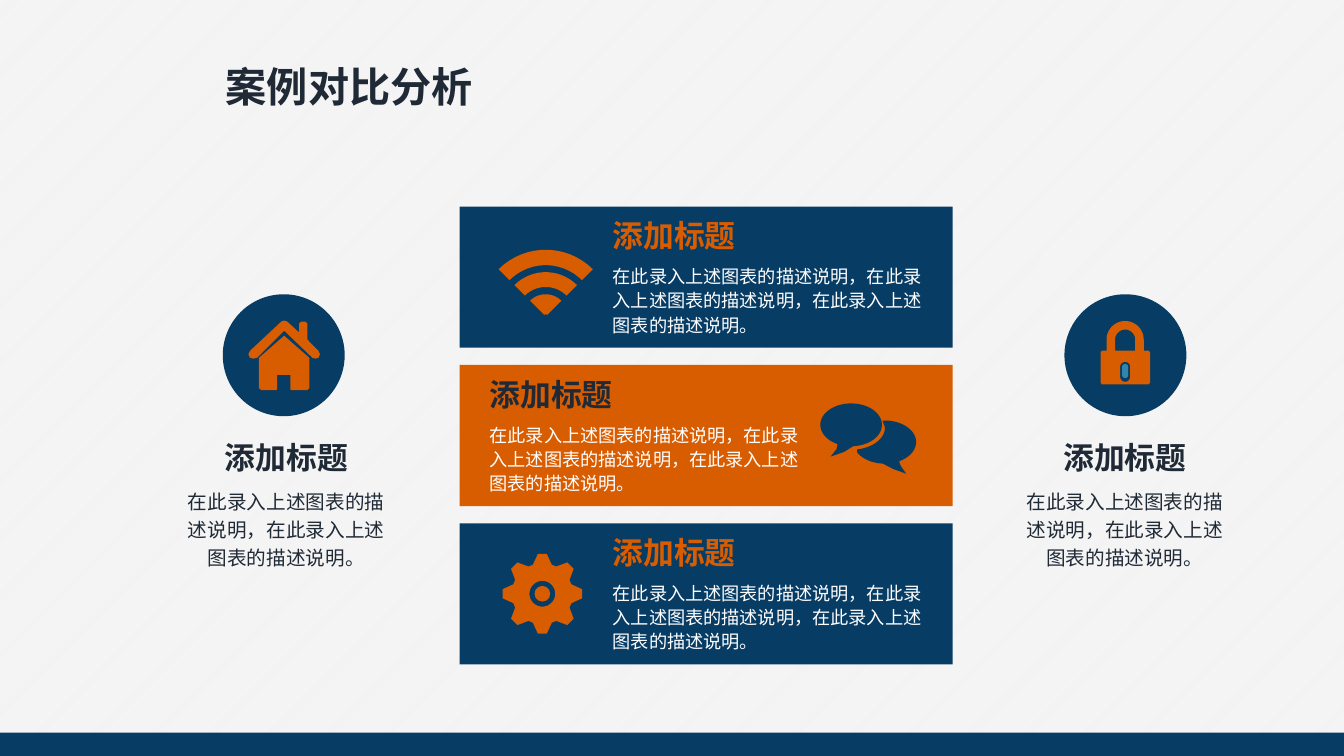
import math

import pptx
import pptx.dml.color
import pptx.enum.dml
import pptx.enum.shapes
import pptx.enum.text
import pptx.oxml
import pptx.oxml.ns
import pptx.util

Pt = pptx.util.Pt
RGB = pptx.dml.color.RGBColor.from_string
SHAPE = pptx.enum.shapes.MSO_SHAPE
ALIGN = pptx.enum.text.PP_ALIGN


class Theme:
    navy, orange, ink = "073C65", "D85C00", "202A36"
    white, grey, sky = "FFFFFF", "F2F2F2", "5ECCF3"
    font, title_font = "Noto Sans CJK SC", "Arial"
    title, heading, side_body, card_body = 29.4, 22, 14, 13


def put_text(sp, text, size, color, bold=False, align=ALIGN.LEFT, spacing=None,
             font=Theme.font, wrap=True):
    tf = sp.text_frame
    tf.word_wrap = wrap
    tf.auto_size = pptx.enum.text.MSO_AUTO_SIZE.NONE
    tf.vertical_anchor = pptx.enum.text.MSO_ANCHOR.TOP
    p = tf.paragraphs[0]
    p.alignment = align
    p.line_spacing = spacing
    r = p.add_run()
    r.text = text
    r.font.size, r.font.bold, r.font.name = Pt(size), bold, font
    r.font.color.rgb = RGB(color)
    ea = pptx.oxml.parse_xml(
        f'<a:ea {pptx.oxml.ns.nsdecls("a")} typeface="{Theme.font}"/>')
    r.font._element.append(ea)


def arc(cx, cy, rx, start, end, ry=None):
    """Points along an elliptical arc; degrees run clockwise from the right."""
    steps = max(2, round(abs(end - start) / 6))
    angles = [math.radians(start + (end - start) * i / steps) for i in range(steps + 1)]
    return [(cx + rx * math.cos(a), cy + (ry or rx) * math.sin(a)) for a in angles]


prs = pptx.Presentation()
prs.slide_width, prs.slide_height = Pt(960), Pt(540)
s = prs.slides.add_slide(prs.slide_layouts[5])
bg = s.background.fill
bg.patterned()
bg.pattern = pptx.enum.dml.MSO_PATTERN.LIGHT_UPWARD_DIAGONAL
bg.fore_color.rgb, bg.back_color.rgb = RGB(Theme.white), RGB(Theme.grey)

title = s.shapes.title
title.left, title.top, title.width, title.height = Pt(154.1), Pt(40.3), Pt(192.2), Pt(42.5)
put_text(title, "案例对比分析", Theme.title, Theme.ink, bold=True,
         font=Theme.title_font, wrap=False)

# Cards, side circles, gear hub and footer band
card_x, card_y, card_step = 328.3, 147.6, 113.1
gear_x, gear_y = 387.4, 424.1
presets = [(SHAPE.RECTANGLE, card_x, card_y + i * card_step, 352.1, 100.8, color)
           for i, color in enumerate((Theme.navy, Theme.orange, Theme.navy))]
presets += [(SHAPE.OVAL, x, 210.2, 87.1, 87.1, Theme.navy) for x in (159.1, 760.3)]
presets += [(SHAPE.OVAL, gear_x - 5.6, gear_y - 5.6, 11.2, 11.2, Theme.orange),
            (SHAPE.RECTANGLE, 0, 523.4, 960, 16.6, Theme.navy)]
for kind, x, y, w, h, color in presets:
    sp = s.shapes.add_shape(kind, Pt(x), Pt(y), Pt(w), Pt(h))
    sp.shadow.inherit = False
    sp.fill.solid()
    sp.fill.fore_color.rgb = RGB(color)
    sp.line.fill.background()

# Icon outlines: each icon is a list of closed contours
house = [
    [(203, 239.8), (221, 255.6), (221, 277.2), (219.6, 278.6), (208, 278.6),
     (207.4, 278), (207.4, 267.8), (198, 267.8), (198, 278), (197.4, 278.6),
     (186.6, 278.6), (185, 277.2), (185, 255.6)],
    [(201, 229.7), (203, 229), (205.2, 229.7), (213.8, 237.6), (213.8, 231),
     (215.2, 229.7), (218.2, 229.7), (219.6, 231), (219.6, 242.6), (227.5, 250.6),
     (228.6, 253), (227.5, 255.6), (225.2, 256.2), (223.2, 255.6), (203, 236.2),
     (183.6, 255.6), (181, 256.2), (178.6, 255.6), (177.4, 253), (178.6, 250.6)],
]
lock_x, shackle_y = 803.7, 242.6
lock = [
    arc(lock_x, shackle_y, 13.3, 180, 360)
    + [(817, 250.5), (820.5, 250.5), (821.5, 251.5), (821.5, 273.5), (820.5, 274.5),
       (787.2, 274.5), (786.2, 273.5), (786.2, 251.5), (787.2, 250.5), (790.4, 250.5)],
    arc(lock_x, shackle_y, 7.2, 180, 360) + [(810.9, 250.5), (796.5, 250.5)],
    arc(lock_x, 262.1, 3.6, 180, 360) + arc(lock_x, 269.1, 3.6, 0, 180),
]
keyhole = [arc(lock_x, 262.2, 2.2, 180, 360) + arc(lock_x, 267.8, 2.2, 0, 180)]
wifi = [arc(389.8, 226, outer, 225, 315) + arc(389.8, 226, inner, 315, 225)
        for outer, inner in ((47.6, 36.6), (31.6, 21), (15.8, 1.5))]
gear = [
    [(gear_x + r * math.cos(math.radians(tooth * 45 + a)),
      gear_y + r * math.sin(math.radians(tooth * 45 + a)))
     for tooth in range(8) for a, r in ((-18, 21.8), (-6.5, 28.6), (6.5, 28.6), (18, 21.8))],
    arc(gear_x, gear_y, 9.2, 0, 360),
]
front_bubble = [arc(608, 303.5, 22, 116, 446, 15.3)
                + [(603, 322.8), (593.3, 326.2), (597.5, 321)]]
back_bubble = [arc(632, 315.8, 22.4, -94, 63, 15.4)
               + [(643.5, 333), (647.3, 338.4), (638, 335), (630.7, 331.2)]
               + arc(632, 315.8, 22.4, 95, 152, 15.4)
               + arc(608, 305.5, 24.2, 80, 0, 15.8)]

icons = [(house, Theme.orange), (lock, Theme.orange), (keyhole, Theme.sky),
         (wifi, Theme.orange), (gear, Theme.orange),
         (back_bubble, Theme.navy), (front_bubble, Theme.navy)]
for contours, color in icons:
    # Hundredths of a point keep the curves smooth
    outlines = [[(round(x * 100), round(y * 100)) for x, y in c] for c in contours]
    builder = s.shapes.build_freeform(*outlines[0][0], scale=Pt(1) / 100)
    for i, points in enumerate(outlines):
        if i:
            builder.move_to(*points[0])
        builder.add_line_segments(points[1:], close=True)
    sp = builder.convert_to_shape()
    sp.shadow.inherit = False
    sp.fill.solid()
    sp.fill.fore_color.rgb = RGB(color)
    sp.line.fill.background()
    if contours is keyhole:
        clr = sp._element.spPr.find(".//" + pptx.oxml.ns.qn("a:srgbClr"))
        clr.append(pptx.oxml.parse_xml(
            f'<a:alpha {pptx.oxml.ns.nsdecls("a")} val="50000"/>'))

# Headings with their descriptions
phrase = "在此录入上述图表的描述说明"
side_text = "，".join([phrase] * 2) + "。"
card_text = "，".join([phrase] * 3) + "。"
heading_w = 122.4
side = dict(text=side_text, size=Theme.side_body, color=Theme.ink,
            align=ALIGN.CENTER, spacing=1.2)
card = dict(text=card_text, size=Theme.card_body, color=Theme.white, spacing=1.1)
blocks = [(cx - heading_w / 2, cx - 77.8, 309.6, 155.5, 68.4, Theme.ink, side)
          for cx in (204.5, 803.5)]
blocks += [(x, x, card_y + i * card_step + 4, 241.9, 59, color, card)
           for i, (x, color) in enumerate(((430.6, Theme.orange), (342.7, Theme.ink),
                                           (430.6, Theme.orange)))]
for heading_x, body_x, y, body_w, body_h, color, body in blocks:
    sp = s.shapes.add_textbox(Pt(heading_x), Pt(y), Pt(heading_w), Pt(33.8))
    put_text(sp, "添加标题", Theme.heading, color, bold=True,
             align=body.get("align", ALIGN.LEFT))
    sp = s.shapes.add_textbox(Pt(body_x), Pt(y + 33.1), Pt(body_w), Pt(body_h))
    put_text(sp, **body)

prs.save("out.pptx")
